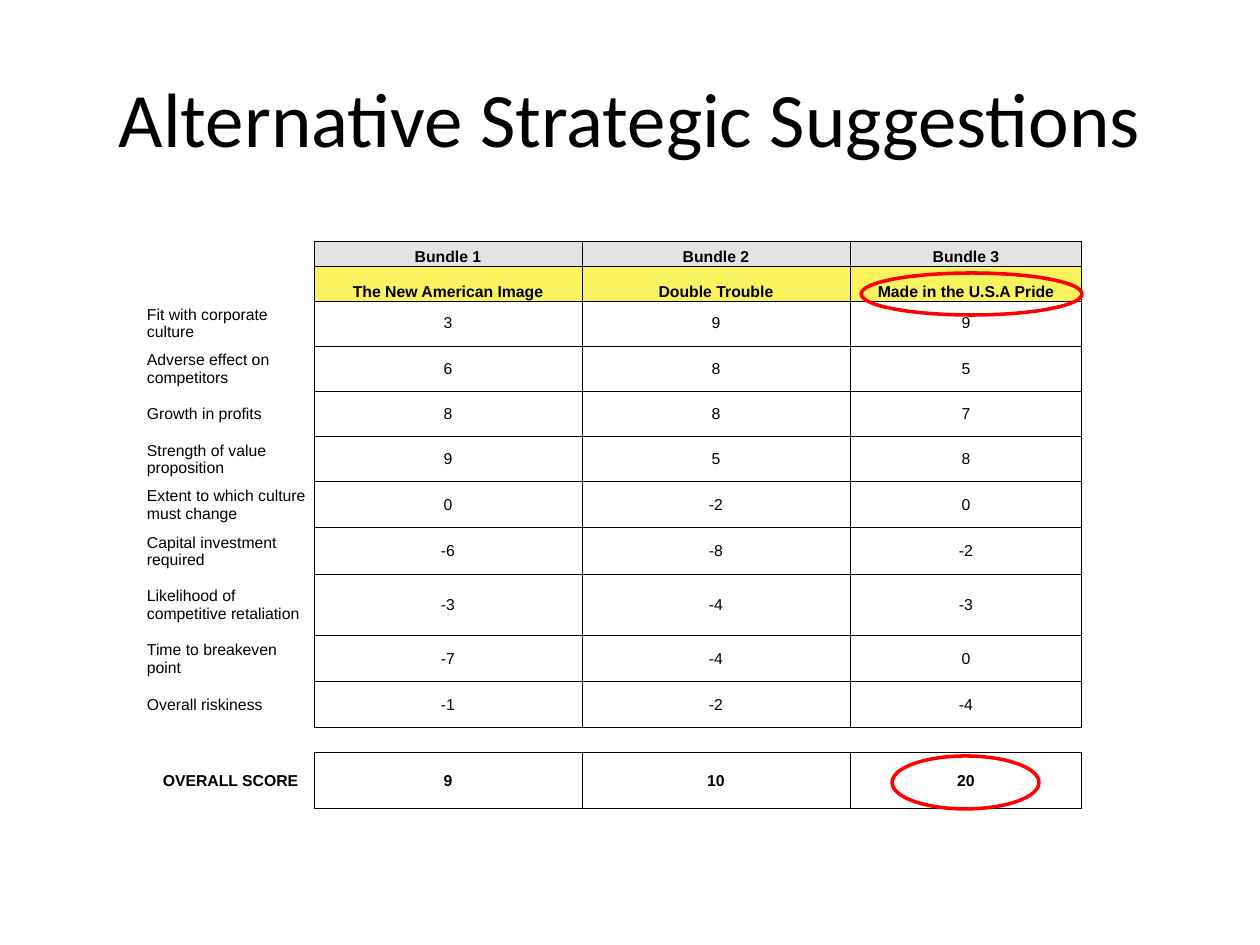
import pptx
import pptx.util
import pptx.dml.color
import pptx.enum.shapes
import pptx.enum.text
import pptx.oxml
import pptx.oxml.ns

COLORS = {"ink": "000000", "gray": "E3E3E3", "gold": "FAF360", "red": "FF0000"}
ALIGN = pptx.enum.text.PP_ALIGN
ANCHOR = pptx.enum.text.MSO_ANCHOR


def px(*sizes):
    return [pptx.util.Emu(round(n * 914400 / 126)) for n in sizes]


def rgb(name):
    return pptx.dml.color.RGBColor.from_string(COLORS[name])


deck = pptx.Presentation()
deck.slide_width, deck.slide_height = px(1260, 945)
slide = deck.slides.add_slide(deck.slide_layouts[5])

# Title
title = slide.shapes.title
title.left, title.top, title.width, title.height = px(63, 38, 1134, 158)
title.text_frame.text = "Alternative Strategic Suggestions"
title.text_frame.vertical_anchor = ANCHOR.MIDDLE
head = title.text_frame.paragraphs[0]
head.alignment = ALIGN.CENTER
head.font.size = pptx.util.Pt(44)
head.font.name = "Calibri"
head.font.color.rgb = rgb("ink")

# Score table: row height, then the four cells
rows = [
    (25, "", "Bundle 1", "Bundle 2", "Bundle 3"),
    (35, "", "The New American Image", "Double Trouble", "Made in the U.S.A Pride"),
    (45, "Fit with corporate culture", "3", "9", "9"),
    (46, "Adverse effect on competitors", "6", "8", "5"),
    (45, "Growth in profits", "8", "8", "7"),
    (45, "Strength of value proposition", "9", "5", "8"),
    (46, "Extent to which culture must change", "0", "-2", "0"),
    (47, "Capital investment required", "-6", "-8", "-2"),
    (61, "Likelihood of competitive retaliation", "-3", "-4", "-3"),
    (46, "Time to breakeven point", "-7", "-4", "0"),
    (46, "Overall riskiness", "-1", "-2", "-4"),
    (25, "", "", "", ""),
    (56, "OVERALL SCORE", "9", "10", "20"),
]
widths = [167, 268, 268, 232]
gap, last = len(rows) - 2, len(rows) - 1
fills = {0: "gray", 1: "gold"}
high = sum(row[0] for row in rows)
table = slide.shapes.add_table(
    len(rows), len(widths), *px(147, 241, sum(widths), high)).table
table.first_row = table.horz_banding = False
for col, width in zip(table.columns, px(*widths)):
    col.width = width

for r, (height, *texts) in enumerate(rows):
    table.rows[r].height = px(height)[0]
    for c, text in enumerate(texts):
        cell = table.cell(r, c)
        cell.margin_left = cell.margin_right = 0
        cell.margin_top = cell.margin_bottom = 0
        cell.vertical_anchor = ANCHOR.BOTTOM if r in fills else ANCHOR.MIDDLE
        cell.text = text
        para = cell.text_frame.paragraphs[0]
        para.alignment = ALIGN.LEFT if c == 0 and r != last else ALIGN.CENTER
        para.font.size = pptx.util.Pt(9)
        para.font.name = "Arial"
        para.font.bold = r in fills or r == last
        para.font.color.rgb = rgb("ink")
        if not text:
            para._p.get_or_add_endParaRPr().set("sz", "900")
        if c and r in fills:
            cell.fill.solid()
            cell.fill.fore_color.rgb = rgb(fills[r])
        else:
            cell.fill.background()

        # Borders: labels only on the right, the gap row only above and below
        if c == 0:
            sides = "" if r == gap else "R"
        else:
            sides = "TB" if r == gap else "LRTB"
        props = cell._tc.get_or_add_tcPr()
        for i, side in enumerate("LRTB"):
            paint = "<a:noFill/>"
            if side in sides:
                paint = f'<a:solidFill><a:srgbClr val="{COLORS["ink"]}"/></a:solidFill>'
            props.insert(i, pptx.oxml.parse_xml(
                f'<a:ln{side} {pptx.oxml.ns.nsdecls("a")} w="6350">{paint}</a:ln{side}>'))

# Rings around the winning bundle and its score
for box in [(861, 273, 221, 42), (892, 756, 147, 53)]:
    ring = slide.shapes.add_shape(pptx.enum.shapes.MSO_SHAPE.OVAL, *px(*box))
    ring.shadow.inherit = False
    ring.fill.background()
    ring.line.color.rgb = rgb("red")
    ring.line.width = pptx.util.Pt(2)

deck.save("out.pptx")
